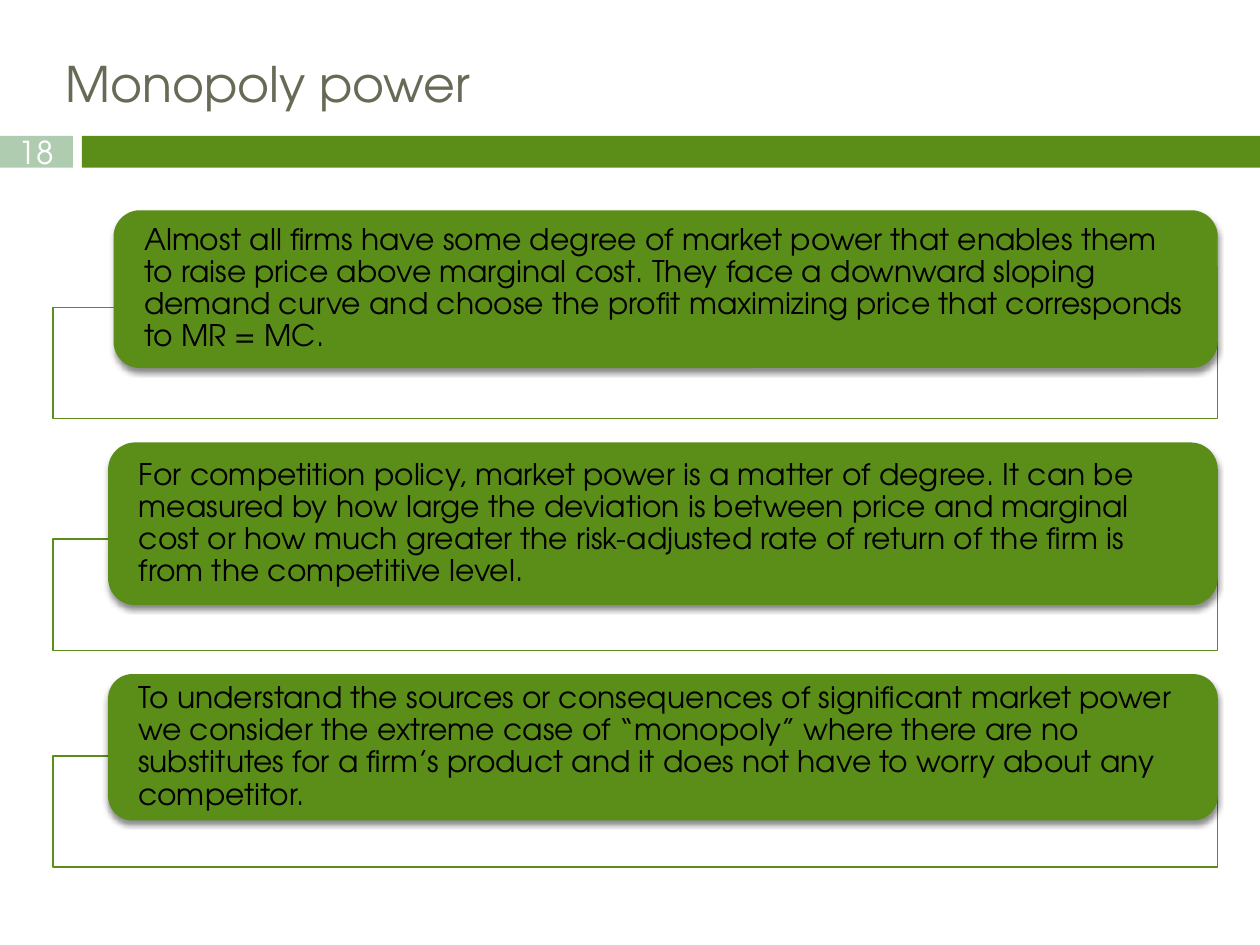
from lxml.etree import SubElement
from pptx import Presentation
from pptx.dml.color import RGBColor
from pptx.enum.shapes import MSO_SHAPE
from pptx.enum.text import MSO_ANCHOR, PP_ALIGN
from pptx.oxml.ns import qn
from pptx.util import Cm, Pt

FONT = "TeX Gyre Adventor"
COLORS = {
    "green": "5A8E19",
    "sage": "B0CCB0",
    "title": "676A55",
    "white": "FFFFFF",
    "black": "000000",
}
LEFT, RIGHT = 1.07, 24.55
CARDS = [
    (6.2, 2.29, 4.24, 3.18,
     "Almost all firms have some degree of market power that enables them to raise price "
     "above marginal cost. They face a downward sloping demand curve and choose the profit "
     "maximizing price that corresponds to MR = MC."),
    (10.87, 2.18, 8.92, 3.28,
     "For competition policy, market power is a matter of degree. It can be measured by how "
     "large the deviation is between price and marginal cost or how much greater the "
     "risk-adjusted rate of return of the firm is from the competitive level."),
    (15.24, 2.18, 13.59, 2.95,
     "To understand the sources or consequences of significant market power we consider the "
     "extreme case of “monopoly” where there are no substitutes for a firm’s product and it "
     "does not have to worry about any competitor."),
]


class Deck:
    def __init__(self):
        self.prs = Presentation()
        self.prs.slide_width, self.prs.slide_height = Cm(25.4), Cm(19.05)
        self.slide = self.prs.slides.add_slide(self.prs.slide_layouts[5])

    def color(self, name):
        return RGBColor.from_string(COLORS[name])

    def label(self, shape, text, size, color, align, anchor, inset=0):
        frame = shape.text_frame
        frame.word_wrap = True
        frame.vertical_anchor = anchor
        frame.margin_left = frame.margin_right = Cm(inset)
        frame.margin_top = frame.margin_bottom = 0
        para = frame.paragraphs[0]
        para.text = text
        para.alignment = align
        para.font.name = FONT
        para.font.size = Pt(size)
        para.font.color.rgb = self.color(color)
        return para

    def title(self, text):
        box = self.slide.shapes.title
        box.left, box.top, box.width, box.height = Cm(LEFT), Cm(1.07), Cm(23.5), Cm(1.65)
        self.label(box, text, 28, "title", PP_ALIGN.LEFT, MSO_ANCHOR.TOP, 0.25)

    def block(self, x, y, w, h, fill, kind=MSO_SHAPE.RECTANGLE):
        shape = self.slide.shapes.add_shape(kind, Cm(x), Cm(y), Cm(w), Cm(h))
        shape.shadow.inherit = False
        shape.fill.solid()
        shape.fill.fore_color.rgb = self.color(fill)
        shape.line.fill.background()
        return shape

    def frame(self, y):
        shape = self.block(LEFT, y, RIGHT - LEFT, 2.24, "white")
        shape.line.color.rgb = self.color("green")
        shape.line.width = Pt(0.79)
        tint = shape._element.spPr.find(qn("a:solidFill"))[0]
        SubElement(tint, qn("a:alpha"), val="90000")

    def shade(self, shape):
        effect = shape._element.spPr.find(qn("a:effectLst"))
        outer = SubElement(effect, qn("a:outerShdw"), blurRad=str(Pt(3)),
                           dist=str(Pt(2.4)), dir="5400000", rotWithShape="0")
        tint = SubElement(outer, qn("a:srgbClr"), val=COLORS["black"])
        SubElement(tint, qn("a:alpha"), val="45000")

    def card(self, x, y, h, text):
        shape = self.block(x, y, RIGHT - x, h, "green", MSO_SHAPE.ROUNDED_RECTANGLE)
        self.shade(shape)
        para = self.label(shape, text, 17, "black", PP_ALIGN.LEFT, MSO_ANCHOR.MIDDLE, 0.46)
        para.line_spacing = 0.9

    def number(self, text):
        shape = self.block(0, 2.74, 1.47, 0.64, "sage")
        self.label(shape, text, 18, "white", PP_ALIGN.CENTER, MSO_ANCHOR.MIDDLE)


def main():
    deck = Deck()
    deck.block(1.65, 2.74, 23.75, 0.64, "green")
    deck.number("18")
    deck.title("Monopoly power")
    for base, x, y, h, text in CARDS:
        deck.frame(base)
        deck.card(x, y, h, text)
    deck.prs.save("out.pptx")


if __name__ == "__main__":
    main()
